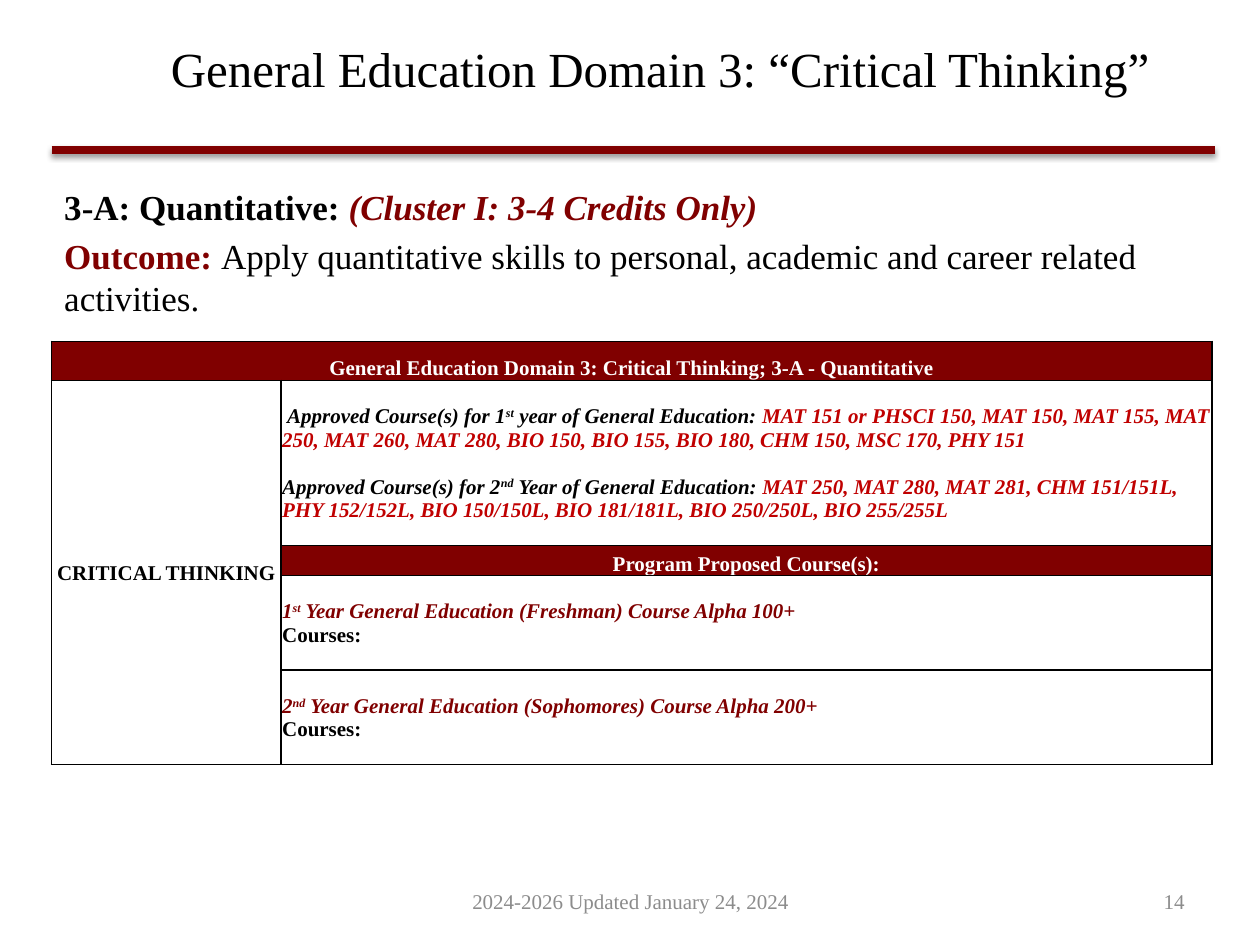
"""Build the general education slide on critical thinking."""
from lxml import etree
from pptx import Presentation
from pptx import util as u
from pptx.dml.color import RGBColor
from pptx.enum import shapes, text
from pptx.oxml import ns

COLORS = {"black": "000000", "white": "FFFFFF", "maroon": "800000", "red": "C00000", "gray": "8C8C8C"}
FONT = "Times New Roman"
GRID_COLUMNS, GRID_ROWS = 100, 75
WIDTH, HEIGHT = u.Inches(10), u.Inches(7.5)
LEFT, CENTER, RIGHT = text.PP_ALIGN.LEFT, text.PP_ALIGN.CENTER, text.PP_ALIGN.RIGHT
MIDDLE, BOTTOM = text.MSO_ANCHOR.MIDDLE, text.MSO_ANCHOR.BOTTOM


def across(columns):
    """Return the length of a number of grid columns."""
    return u.Emu(round(WIDTH * columns / GRID_COLUMNS))


def down(rows):
    """Return the length of a number of grid rows."""
    return u.Emu(round(HEIGHT * rows / GRID_ROWS))


def box(left, top, width, height):
    """Return a grid rectangle as slide lengths."""
    return across(left), down(top), across(width), down(height)


def place(shape, area):
    """Move and size a shape to an area."""
    shape.left, shape.top, shape.width, shape.height = area


def add_element(parent, tag, **attributes):
    """Append a drawing element with attributes."""
    element = etree.SubElement(parent, ns.qn(tag))
    for name, value in attributes.items():
        element.set(name, str(value))
    return element


def write(paragraph, runs, size, align=LEFT):
    """Fill a paragraph with (text, color, style) runs, style using b, i and ^."""
    paragraph.alignment = align
    for words, color, style in runs:
        run = paragraph.add_run()
        run.text = words
        run.font.name, run.font.size = FONT, u.Pt(size)
        run.font.bold, run.font.italic = "b" in style, "i" in style
        run.font.color.rgb = RGBColor.from_string(COLORS[color])
        if "^" in style:
            run._r.get_or_add_rPr().set("baseline", "30000")


def add_title(slide, words):
    """Write the slide title, set a little right of centre."""
    title = slide.shapes.title
    place(title, box(5, 0.6, 90, 9.6))
    frame = title.text_frame
    frame.auto_size = text.MSO_AUTO_SIZE.NONE
    frame.vertical_anchor = MIDDLE
    frame.margin_left = across(5.8)
    write(frame.paragraphs[0], [(words, "black", "")], 28, CENTER)


def add_rule(slide):
    """Draw the shadowed rule under the title."""
    rule = slide.shapes.add_connector(
        shapes.MSO_CONNECTOR.STRAIGHT, across(4.1), down(11.9), across(96.4), down(11.9))
    rule.line.width = u.Pt(4.5)
    rule.line.color.rgb = RGBColor.from_string(COLORS["maroon"])
    effects = add_element(rule._element.spPr, "a:effectLst")
    shadow = add_element(effects, "a:outerShdw", blurRad=u.Pt(3.1), dist=u.Pt(1.6),
                         dir=90 * 60000, rotWithShape=0)
    color = add_element(shadow, "a:srgbClr", val=COLORS["black"])
    add_element(color, "a:alpha", val=38000)


def add_body(slide, lines):
    """Write unbulleted lines in the body placeholder."""
    body = slide.placeholders[1]
    place(body, box(4.1, 13.9, 92, 8.5))
    frame = body.text_frame
    frame.auto_size = text.MSO_AUTO_SIZE.NONE
    frame.margin_top = down(0.8)
    for index, runs in enumerate(lines):
        paragraph = frame.add_paragraph() if index else frame.paragraphs[0]
        properties = paragraph._p.get_or_add_pPr()
        properties.set("marL", "0")
        properties.set("indent", "0")
        add_element(properties, "a:buNone")
        paragraph.space_before = u.Pt(4 if index else 0)
        write(paragraph, runs, 20)


def add_label(slide, area, words, align):
    """Add a gray footer label."""
    label = slide.shapes.add_textbox(*area)
    frame = label.text_frame
    frame.word_wrap = True
    frame.vertical_anchor = MIDDLE
    write(frame.paragraphs[0], [(words, "gray", "")], 12, align)


def style_cell(cell, fill):
    """Set fill, insets and black borders of a cell."""
    cell.fill.solid()
    cell.fill.fore_color.rgb = RGBColor.from_string(COLORS[fill])
    cell.margin_left = cell.margin_right = cell.margin_top = u.Inches(0.01)
    cell.margin_bottom = 0
    properties = cell._tc.get_or_add_tcPr()
    for index, side in enumerate(("a:lnL", "a:lnR", "a:lnT", "a:lnB")):
        line = etree.Element(ns.qn(side), w=str(u.Pt(1)))
        solid = add_element(line, "a:solidFill")
        add_element(solid, "a:srgbClr", val=COLORS["black"])
        properties.insert(index, line)


def fill_cell(cell, lines, align=LEFT, anchor=MIDDLE, gap=0):
    """Write lines of runs in a cell."""
    cell.vertical_anchor = anchor
    for index, runs in enumerate(lines):
        paragraph = cell.text_frame.add_paragraph() if index else cell.text_frame.paragraphs[0]
        paragraph.space_before = u.Pt(gap if index else 0)
        write(paragraph, runs, 12, align)


def ordinal(before, suffix, after, color):
    """Return runs for a phrase holding a raised ordinal suffix."""
    return [(before, color, "bi"), (suffix, color, "bi^"), (after, color, "bi")]


def add_course_table(slide):
    """Add the table of approved and proposed courses."""
    heights = (3.1, 13.1, 2.4, 7.5, 7.5)
    table = slide.shapes.add_table(5, 2, *box(4.1, 27.1, 92.1, sum(heights))).table
    table.first_row = table.horz_banding = False
    for column, width in zip(table.columns, (18.2, 73.9)):
        column.width = across(width)
    for index, height in enumerate(heights):
        table.rows[index].height = down(height)
        for column in range(2):
            banner = index == 0 or (index, column) == (2, 1)
            style_cell(table.cell(index, column), "maroon" if banner else "white")
    table.cell(0, 0).merge(table.cell(0, 1))
    table.cell(1, 0).merge(table.cell(4, 0))

    banners = {(0, 0): "General Education Domain 3: Critical Thinking; 3-A - Quantitative",
               (2, 1): "Program Proposed Course(s):"}
    for position, words in banners.items():
        fill_cell(table.cell(*position), [[(words, "white", "b")]], CENTER, BOTTOM)
    fill_cell(table.cell(1, 0), [[("CRITICAL THINKING", "black", "b")]], CENTER)

    approved = [
        ("1", "st", " year", "MAT 151 or PHSCI 150, MAT 150, MAT 155, MAT 250, MAT 260, MAT 280, "
         "BIO 150, BIO 155, BIO 180, CHM 150, MSC 170, PHY 151"),
        ("2", "nd", " Year", "MAT 250, MAT 280, MAT 281, CHM 151/151L, PHY 152/152L, "
         "BIO 150/150L, BIO 181/181L, BIO 250/250L, BIO 255/255L")]
    courses = table.cell(1, 1)
    fill_cell(courses, [
        ordinal("Approved Course(s) for " + number, suffix, year + " of General Education: ", "black")
        + [(names, "red", "bi")] for number, suffix, year, names in approved], gap=13.5)
    courses.text_frame.paragraphs[0]._p.get_or_add_pPr().set("indent", str(u.Inches(0.04)))

    proposed = [("1", "st", "Freshman", 100), ("2", "nd", "Sophomores", 200)]
    for row, (number, suffix, group, level) in enumerate(proposed, 3):
        phrase = f" Year General Education ({group}) Course Alpha {level}+"
        fill_cell(table.cell(row, 1), [ordinal(number, suffix, phrase, "maroon"),
                                       [("Courses:", "black", "b")]])


def main():
    """Build and save the presentation."""
    presentation = Presentation()
    presentation.slide_width, presentation.slide_height = WIDTH, HEIGHT
    slide = presentation.slides.add_slide(presentation.slide_layouts[1])
    add_title(slide, "General Education Domain 3: “Critical Thinking”")
    add_rule(slide)
    add_label(slide, box(71.7, 69.5, 23.3, 4), "14", RIGHT)
    add_course_table(slide)
    add_body(slide, [
        [("3-A: Quantitative: ", "black", "b"), ("(Cluster I: 3-4 Credits Only)", "maroon", "bi")],
        [("Outcome: ", "maroon", "b"),
         ("Apply quantitative skills to personal, academic and career related activities.", "black", "")]])
    add_label(slide, box(34.2, 69.5, 31.7, 4), "2024-2026 Updated January 24, 2024", CENTER)
    presentation.save("out.pptx")


if __name__ == "__main__":
    main()
